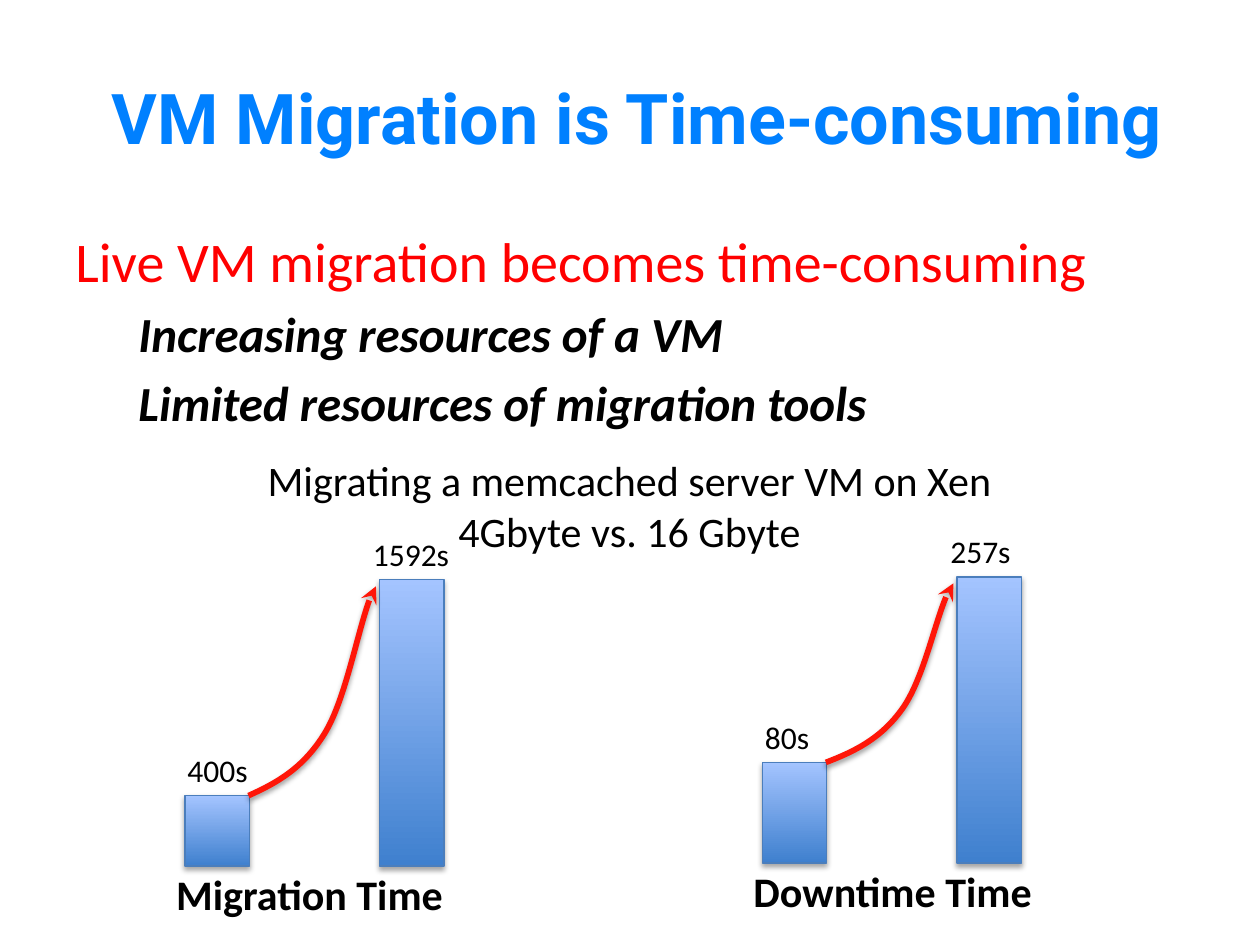
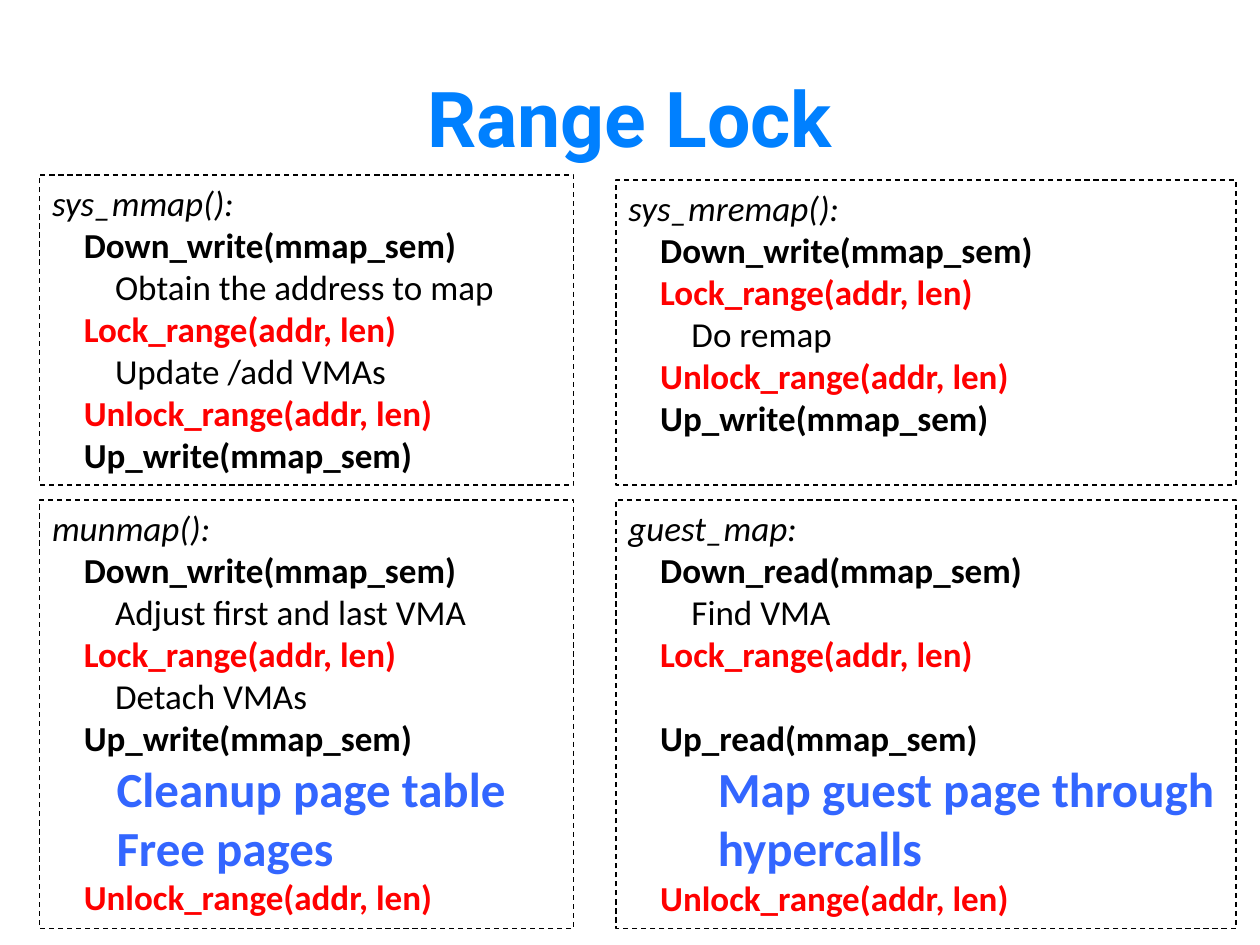
import dataclasses
import pptx
import pptx.dml.color
import pptx.enum.dml
import pptx.enum.shapes
import pptx.enum.text
import pptx.oxml.ns
import pptx.util
from lxml import etree

Cm = pptx.util.Cm
Pt = pptx.util.Pt
qn = pptx.oxml.ns.qn
Align = pptx.enum.text.PP_ALIGN
Anchor = pptx.enum.text.MSO_ANCHOR
Preset = pptx.enum.shapes.MSO_SHAPE

BLACK, RED, BLUE, AZURE = "000000", "FF0000", "3366FF", "0080FF"
BEND = [(0.22, 0.06), (0.43, 0.13), (0.6, 0.3),
        (0.76, 0.46), (0.9, 0.92), (1, 1)]


def color(text):
    return pptx.dml.color.RGBColor.from_string(text)


@dataclasses.dataclass
class Look:
    size: int = 20
    ink: str = BLACK
    bold: bool = False
    slant: bool = False
    indent: float = 0
    gap: float = 0
    font: str = "Calibri"
    align: object = Align.LEFT


HEAD = Look(40, AZURE, True, font="Roboto", align=Align.CENTER)
LEAD = Look(32, RED)
POINT = Look(28, bold=True, slant=True, indent=1.27, gap=5.6)
NOTE = Look(24, align=Align.CENTER)
VALUE = Look(18)
AXIS = Look(24, bold=True)
NAME = Look(slant=True)
CALL = Look(bold=True, indent=0.64)
LATE = dataclasses.replace(CALL, gap=24.4)
LOCK = dataclasses.replace(CALL, ink=RED)
STEP = Look(indent=1.27)
CLEAN = Look(28, BLUE, True, indent=1.3)
GUEST = dataclasses.replace(CLEAN, indent=1.8)

DOWN = (CALL, "Down_write(mmap_sem)")
UP = (CALL, "Up_write(mmap_sem)")
HOLD = (LOCK, "Lock_range(addr, len)")
FREE = (LOCK, "Unlock_range(addr, len)")


class Deck:
    def __init__(self):
        self.show = pptx.Presentation()
        self.show.slide_width = Cm(25.4)
        self.show.slide_height = Cm(19.05)
        self.page = None

    def start(self, title, left, width, size):
        self.page = self.show.slides.add_slide(self.show.slide_layouts[6])
        look = dataclasses.replace(HEAD, size=size)
        box = self.text(left, 0.76, width, 3.18, [(look, title)])
        box.text_frame.vertical_anchor = Anchor.MIDDLE

    def fill(self, frame, lines):
        for num, (look, words) in enumerate(lines):
            para = frame.add_paragraph() if num else frame.paragraphs[0]
            para.alignment = look.align
            if look.indent:
                para._p.get_or_add_pPr().set("marL", str(Cm(look.indent)))
            if look.gap:
                para.space_before = Pt(look.gap)
            run = para.add_run()
            run.text = words
            run.font.name = look.font
            run.font.size = Pt(look.size)
            run.font.bold = look.bold
            run.font.italic = look.slant
            run.font.color.rgb = color(look.ink)

    def text(self, left, top, width, height, lines, wrap=True):
        box = self.page.shapes.add_textbox(
            Cm(left), Cm(top), Cm(width), Cm(height))
        box.text_frame.word_wrap = wrap
        self.fill(box.text_frame, lines)
        return box

    def rect(self, left, top, width, height, ink):
        box = self.page.shapes.add_shape(
            Preset.RECTANGLE, Cm(left), Cm(top), Cm(width), Cm(height))
        box.shadow.inherit = False
        box.line.color.rgb = color(ink)
        box.line.width = Pt(0.75)
        return box

    def panel(self, left, top, width, height, lines):
        box = self.rect(left, top, width, height, BLACK)
        box.fill.background()
        box.line.dash_style = pptx.enum.dml.MSO_LINE.DASH
        box.text_frame.word_wrap = True
        box.text_frame.vertical_anchor = Anchor.TOP
        self.fill(box.text_frame, lines)

    def shade(self, shape, alpha, dist):
        shape.shadow.inherit = False
        effect = shape._element.spPr.find(qn("a:effectLst"))
        drop = etree.SubElement(
            effect, qn("a:outerShdw"), blurRad=str(Pt(3.1)),
            dist=str(Pt(dist)), dir="5400000", rotWithShape="0")
        tone = etree.SubElement(drop, qn("a:srgbClr"), val=BLACK)
        etree.SubElement(tone, qn("a:alpha"), val=str(alpha * 1000))

    def bar(self, left, base, height, value, shift, width):
        top = base - height
        box = self.rect(left, top, 1.3, height, "4B7EBC")
        box.fill.gradient()
        box.fill.gradient_angle = 90
        for stop, ink in zip(box.fill.gradient_stops, ("3F80CE", "A4C4FF")):
            stop.color.rgb = color(ink)
        self.shade(box, 35, 1.8)
        label = self.text(left - shift, top - 1.02, width, 1.02,
                          [(VALUE, value)], wrap=False)
        self.page.shapes.add_group_shape([box, label])

    def curve(self, left, top, width, rise):
        build = self.page.shapes.build_freeform(Cm(left), Cm(top))
        build.add_line_segments(
            [(Cm(left + x * width), Cm(top - y * rise)) for x, y in BEND],
            close=False)
        shape = build.convert_to_shape()
        steps = list(shape._element.iter(qn("a:lnTo")))
        track = steps[0].getparent()
        for num in range(0, len(steps), 3):
            bend = etree.SubElement(track, qn("a:cubicBezTo"))
            for step in steps[num:num + 3]:
                bend.append(step[0])
                track.remove(step)
        shape.fill.background()
        shape.line.color.rgb = color("FF1608")
        shape.line.width = Pt(3.25)
        etree.SubElement(shape.line._get_or_add_ln(), qn("a:tailEnd"),
                         type="stealth")
        self.shade(shape, 38, 1.6)

    def chart(self, left, base, name, low, high):
        self.bar(left, base, *low)
        self.bar(left + 3.92, base, *high)
        self.curve(left + 1.28, base - low[0], 2.57,
                   high[0] - low[0] - 0.13)
        self.text(left - 0.43, base - 0.07, 6.22, 1.27, [(AXIS, name)])


def main():
    deck = Deck()

    deck.start("VM Migration is Time-consuming", -0.08, 25.83, 40)
    deck.text(1.27, 4.45, 22.86, 12.57, [
        (LEAD, "Live VM migration becomes time-consuming"),
        (POINT, "Increasing resources of a VM"),
        (POINT, "Limited resources of migration tools")])
    deck.text(4.22, 9.04, 16.94, 2.31, [
        (NOTE, "Migrating a memcached server VM on Xen 4Gbyte vs. 16 Gbyte")])
    deck.chart(3.73, 17.46, "Migration Time",
               (1.42, "400s", 0.2, 1.73), (5.77, "1592s", 0.38, 2.06))
    deck.chart(15.37, 17.4, "Downtime Time",
               (2.03, "80s", 0.2, 1.42), (5.77, "257s", 0.38, 1.73))

    deck.start("Range Lock", 1.27, 22.86, 44)
    deck.panel(0.8, 3.53, 10.77, 6.25, [
        (NAME, "sys_mmap():"), DOWN, (STEP, "Obtain the address to map"),
        HOLD, (STEP, "Update /add VMAs"), FREE, UP])
    deck.panel(12.42, 3.63, 12.5, 6.15, [
        (NAME, "sys_mremap():"), DOWN, HOLD, (STEP, "Do remap"), FREE, UP])
    deck.panel(0.8, 10.08, 10.77, 8.64, [
        (NAME, "munmap():"), DOWN, (STEP, "Adjust first and last VMA"),
        HOLD, (STEP, "Detach VMAs"), UP,
        (CLEAN, "Cleanup page table"), (CLEAN, "Free pages"), FREE])
    deck.panel(12.42, 10.08, 12.5, 8.64, [
        (NAME, "guest_map:"), (CALL, "Down_read(mmap_sem)"),
        (STEP, "Find VMA"), HOLD, (LATE, "Up_read(mmap_sem)"),
        (GUEST, "Map guest page through"), (GUEST, "hypercalls"), FREE])

    deck.show.save("out.pptx")


if __name__ == "__main__":
    main()
